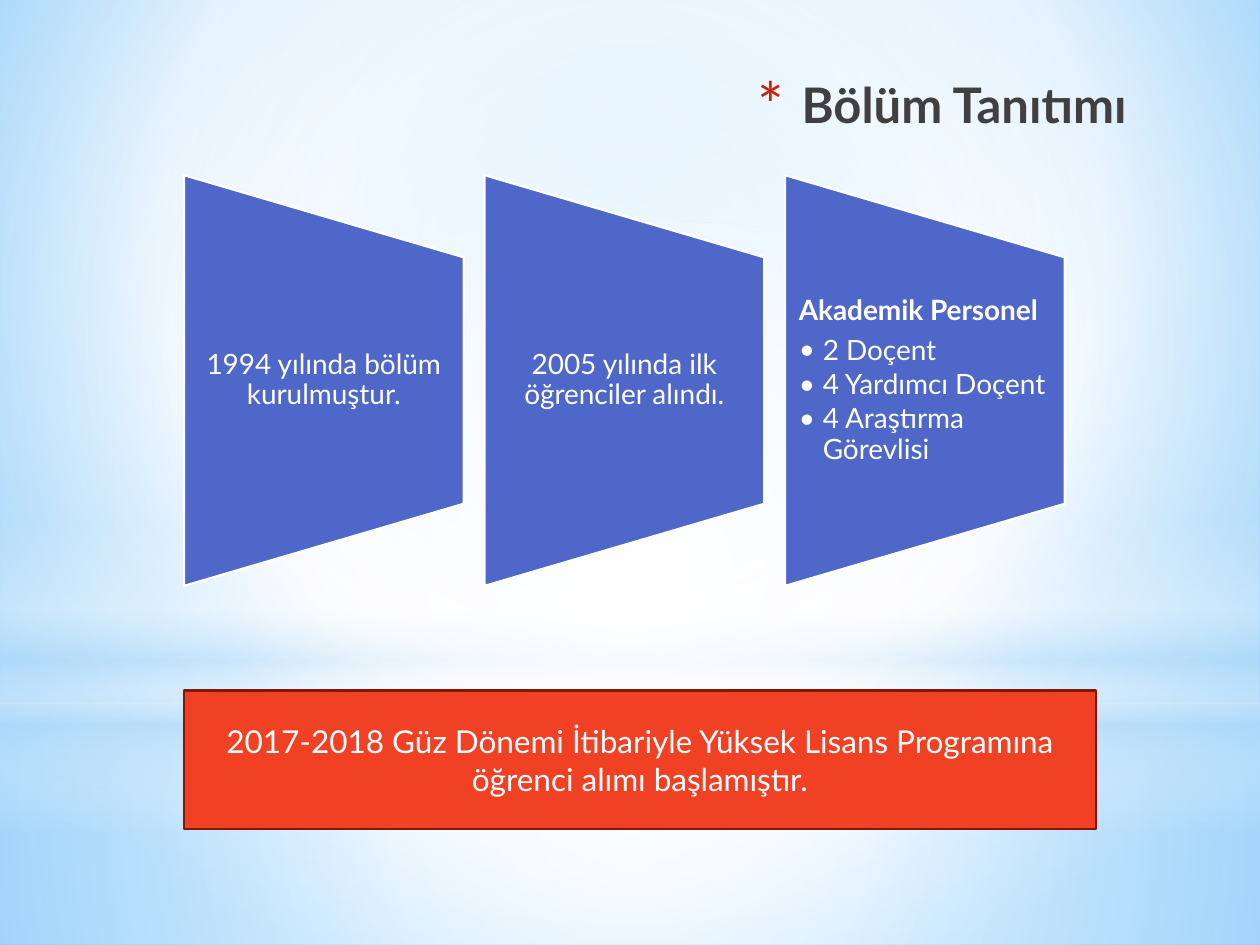
from dataclasses import dataclass

from lxml.etree import SubElement
from pptx import Presentation
from pptx.dml.color import RGBColor
from pptx.enum.shapes import MSO_SHAPE
from pptx.enum.text import MSO_ANCHOR, PP_ALIGN
from pptx.oxml import parse_xml
from pptx.oxml.ns import nsdecls, qn
from pptx.util import Inches, Pt


@dataclass(frozen=True)
class Theme:
    font: str = "Lato"
    title: str = "404040"
    title_bullet: str = "C3260C"
    light: str = "FFFFFF"
    sky: str = "B4DCFA"
    panel: str = "4E67C8"
    banner: str = "F14124"
    banner_edge: str = "821705"
    title_size: int = 28
    panel_size: int = 16
    banner_size: int = 18
    edge_width: float = 1.25


@dataclass(frozen=True)
class Stop:
    position: int
    color: str
    opacity: int = 100


@dataclass(frozen=True)
class Glow:
    preset: MSO_SHAPE
    top: float
    height: float
    stops: tuple[Stop, ...]
    geometry: str


@dataclass(frozen=True)
class Line:
    text: str
    bold: bool = False
    bulleted: bool = False
    align: PP_ALIGN = PP_ALIGN.LEFT


THEME = Theme()
LINEAR_DOWN = '<a:lin ang="5400000" scaled="0"/>'
PANEL_WIDTH, PANEL_HEIGHT, PANEL_PITCH = 2.22, 3.26, 2.385
PANEL_LEFT, PANEL_MIDDLE = 1.46, 3.02
PANEL_TEXT_HEIGHT = 1.96


def radial(left: int, top: int, right: int, bottom: int) -> str:
    sides = zip("ltrb", (left, top, right, bottom))
    focus = " ".join(f'{side}="{percent * 1000}"' for side, percent in sides)
    return f'<a:path path="circle"><a:fillToRect {focus}/></a:path>'


CENTERED = radial(50, 50, 50, 50)
SKY_STOPS = (Stop(0, "9ED5FF"), Stop(60, "FFFFFF"), Stop(100, "5BB9FF"))
GLOWS = (
    Glow(MSO_SHAPE.RECTANGLE, 5.58, 1.92,
         (Stop(0, THEME.light, 91), Stop(37, THEME.light, 76),
          Stop(100, THEME.sky, 79)), CENTERED),
    Glow(MSO_SHAPE.RECTANGLE, 0, 5.58,
         (Stop(0, THEME.light, 89), Stop(48, THEME.light, 62),
          Stop(100, THEME.sky, 79)), CENTERED),
    Glow(MSO_SHAPE.RECTANGLE, 4.12, 2.5,
         (Stop(0, THEME.light, 0), Stop(29, THEME.light, 30),
          Stop(45, THEME.sky, 40), Stop(55, THEME.light, 26),
          Stop(65, THEME.sky, 60), Stop(100, THEME.light, 0)), LINEAR_DOWN),
    Glow(MSO_SHAPE.OVAL, 1.75, 5.58,
         (Stop(0, THEME.light), Stop(56, THEME.light, 0)), CENTERED),
)
PANELS = (
    (Line("1994 yılında bölüm kurulmuştur.", align=PP_ALIGN.CENTER),),
    (Line("2005 yılında ilk öğrenciler alındı.", align=PP_ALIGN.CENTER),),
    (Line("Akademik Personel", bold=True),
     Line("2 Doçent", bulleted=True),
     Line("4 Yardımcı Doçent", bulleted=True),
     Line("4 Araştırma Görevlisi", bulleted=True)),
)


def apply_gradient(owner, stops: tuple[Stop, ...], geometry: str) -> None:
    """Replace the empty fill directly under owner with a gradient."""
    stop_xml = "".join(
        f'<a:gs pos="{stop.position * 1000}"><a:srgbClr val="{stop.color}">'
        f'<a:alpha val="{stop.opacity * 1000}"/></a:srgbClr></a:gs>'
        for stop in stops)
    gradient = parse_xml(
        f'<a:gradFill {nsdecls("a")} rotWithShape="1">'
        f"<a:gsLst>{stop_xml}</a:gsLst>{geometry}</a:gradFill>")
    owner.replace(owner.find(qn("a:noFill")), gradient)


def set_all(target, values: dict) -> None:
    for attribute, value in values.items():
        setattr(target, attribute, value)


def style_font(font, size: int, color: str, bold: bool = False) -> None:
    set_all(font, {"name": THEME.font, "size": Pt(size), "bold": bold})
    font.color.rgb = RGBColor.from_string(color)


def add_bullet(paragraph, symbol: str, indent: float,
               color: str = "", percent: int = 100) -> None:
    properties = paragraph._p.get_or_add_pPr()
    properties.set("marL", str(Inches(indent)))
    properties.set("indent", str(-Inches(indent)))
    if color:
        bullet_color = SubElement(properties, qn("a:buClr"))
        SubElement(bullet_color, qn("a:srgbClr")).set("val", color)
    SubElement(properties, qn("a:buSzPct")).set("val", str(percent * 1000))
    SubElement(properties, qn("a:buFont")).set("typeface", THEME.font)
    SubElement(properties, qn("a:buChar")).set("char", symbol)


def draw_glow(slide, glow: Glow) -> None:
    light = slide.shapes.add_shape(
        glow.preset, 0, Inches(glow.top), Inches(10), Inches(glow.height))
    light.shadow.inherit = False
    light.fill.background()
    apply_gradient(light.element.spPr, glow.stops, glow.geometry)
    light.line.fill.background()


def draw_block(slide, preset: MSO_SHAPE, box: tuple[float, ...],
               fill: str, edge: str):
    block = slide.shapes.add_shape(preset, *map(Inches, box))
    block.shadow.inherit = False
    block.fill.solid()
    block.fill.fore_color.rgb = RGBColor.from_string(fill)
    block.line.color.rgb = RGBColor.from_string(edge)
    block.line.width = Pt(THEME.edge_width)
    return block


def draw_panel(slide, left: float, lines: tuple[Line, ...]) -> None:
    """Draw a sideways trapezoid with upright text over it."""
    box = (left + (PANEL_WIDTH - PANEL_HEIGHT) / 2,
           PANEL_MIDDLE - PANEL_WIDTH / 2, PANEL_HEIGHT, PANEL_WIDTH)
    trapezoid = draw_block(slide, MSO_SHAPE.FLOWCHART_MANUAL_OPERATION, box,
                           THEME.panel, THEME.light)
    trapezoid.rotation = 270
    caption = slide.shapes.add_textbox(
        Inches(left), Inches(PANEL_MIDDLE - PANEL_TEXT_HEIGHT / 2),
        Inches(PANEL_WIDTH), Inches(PANEL_TEXT_HEIGHT)).text_frame
    set_all(caption, {
        "word_wrap": True, "vertical_anchor": MSO_ANCHOR.MIDDLE,
        "margin_left": Inches(0.11), "margin_right": Inches(0.11),
        "margin_top": 0, "margin_bottom": 0})
    for index, line in enumerate(lines):
        paragraph = caption.add_paragraph() if index else caption.paragraphs[0]
        gap = 0.15 if line.bulleted else 0.35
        set_all(paragraph, {
            "text": line.text, "alignment": line.align, "line_spacing": 0.9,
            "space_after": Pt(THEME.panel_size * gap)})
        style_font(paragraph.runs[0].font, THEME.panel_size, THEME.light, line.bold)
        if line.bulleted:
            paragraph.level = 1
            add_bullet(paragraph, "•", 0.19)


def draw_title(slide) -> None:
    title = slide.shapes.title
    title.element.getparent().append(title.element)
    set_all(title, {"left": Inches(2.09), "top": Inches(0.29),
                    "width": Inches(7.12), "height": Inches(1.25)})
    set_all(title.text_frame, {
        "text": "Bölüm Tanıtımı", "vertical_anchor": MSO_ANCHOR.MIDDLE,
        "margin_right": Inches(0.27), "margin_bottom": Inches(0.23)})
    heading = title.text_frame.paragraphs[0]
    heading.alignment = PP_ALIGN.RIGHT
    style_font(heading.runs[0].font, THEME.title_size, THEME.title, bold=True)
    add_bullet(heading, "*", 0.35, THEME.title_bullet, 128)


def draw_banner(slide) -> None:
    banner = draw_block(slide, MSO_SHAPE.RECTANGLE, (1.46, 5.48, 7.24, 1.1),
                        THEME.banner, THEME.banner_edge).text_frame
    set_all(banner, {"word_wrap": True, "vertical_anchor": MSO_ANCHOR.MIDDLE})
    notice = banner.paragraphs[0]
    notice.text = ("2017-2018 Güz Dönemi İtibariyle Yüksek Lisans Programına "
                   "öğrenci alımı başlamıştır.")
    notice.alignment = PP_ALIGN.CENTER
    style_font(notice.runs[0].font, THEME.banner_size, THEME.light)


def main() -> None:
    deck = Presentation()
    set_all(deck, {"slide_width": Inches(10), "slide_height": Inches(7.5)})
    slide = deck.slides.add_slide(deck.slide_layouts[5])
    slide.background.fill.background()
    apply_gradient(slide.element.find(".//" + qn("p:bgPr")), SKY_STOPS,
                   radial(20, 10, 20, 60))
    for glow in GLOWS:
        draw_glow(slide, glow)
    draw_title(slide)
    for index, lines in enumerate(PANELS):
        draw_panel(slide, PANEL_LEFT + index * PANEL_PITCH, lines)
    draw_banner(slide)
    deck.save("out.pptx")


if __name__ == "__main__":
    main()
